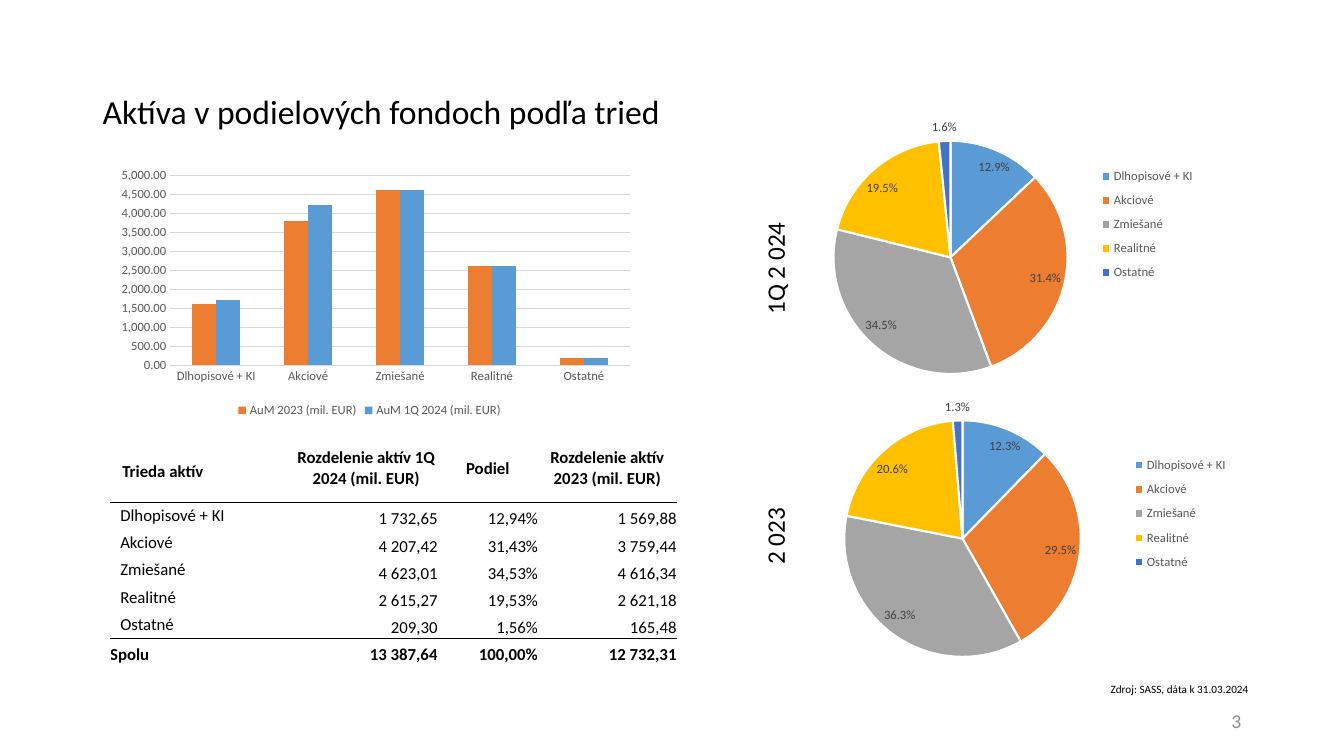
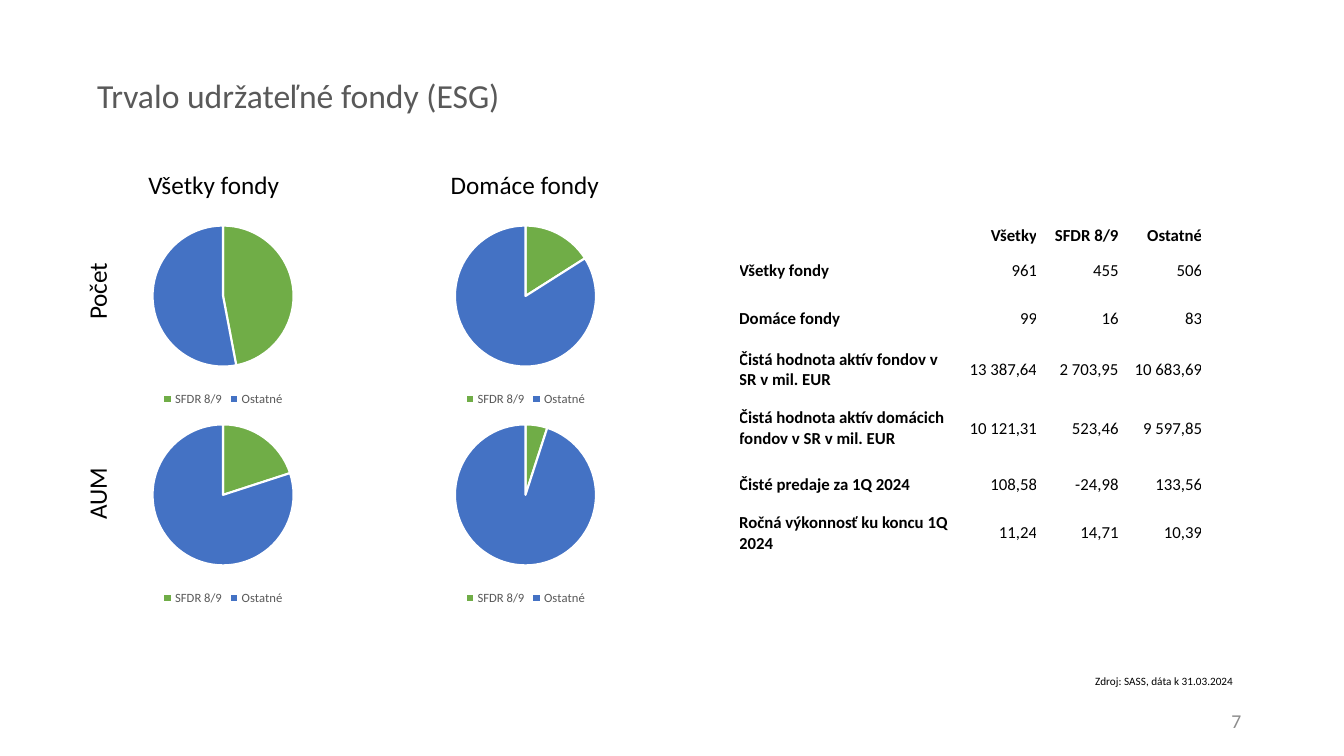
from collections import namedtuple

from lxml.etree import SubElement
from pptx import Presentation
from pptx.chart.data import CategoryChartData
from pptx.dml.color import RGBColor
from pptx.enum.chart import XL_CHART_TYPE as Chart
from pptx.enum.chart import XL_LABEL_POSITION as LabelPos
from pptx.enum.chart import XL_LEGEND_POSITION as LegendPos
from pptx.enum.chart import XL_TICK_MARK as Tick
from pptx.enum.text import MSO_ANCHOR as Anchor
from pptx.enum.text import PP_ALIGN as Align
from pptx.oxml.ns import qn
from pptx.util import Inches, Pt

Box = namedtuple("Box", "x y w h")
W, H = Inches(13.33), Inches(7.5)
FONT = "Calibri"
COLORS = {
    "black": "000000", "gray": "595959", "label": "404040", "number": "8C8C8C",
    "grid": "D9D9D9", "white": "FFFFFF", "blue": "5B9BD5", "orange": "ED7D31",
    "silver": "A5A5A5", "gold": "FFC000", "navy": "4472C4", "green": "70AD47",
}
CLASS_COLORS = ["blue", "orange", "silver", "gold", "navy"]
ESG_COLORS = ["green", "navy"]
SOURCE = "Zdroj: SASS, dáta k 31.03.2024"

ASSET_ROWS = [
    ["Trieda aktív", "Rozdelenie aktív 1Q 2024 (mil. EUR)", "Podiel",
     "Rozdelenie aktív 2023 (mil. EUR)"],
    ["Dlhopisové + KI", "1 732,65", "12,94%", "1 569,88"],
    ["Akciové", "4 207,42", "31,43%", "3 759,44"],
    ["Zmiešané", "4 623,01", "34,53%", "4 616,34"],
    ["Realitné", "2 615,27", "19,53%", "2 621,18"],
    ["Ostatné", "209,30", "1,56%", "165,48"],
    ["Spolu", "13 387,64", "100,00%", "12 732,31"],
]
ESG_ROWS = [
    ["", "Všetky", "SFDR 8/9", "Ostatné"],
    ["Všetky fondy", "961", "455", "506"],
    ["Domáce fondy", "99", "16", "83"],
    ["Čistá hodnota aktív fondov v SR v mil. EUR", "13 387,64", "2 703,95", "10 683,69"],
    ["Čistá hodnota aktív domácich fondov v SR v mil. EUR", "10 121,31", "523,46", "9 597,85"],
    ["Čisté predaje za 1Q 2024", "108,58", "-24,98", "133,56"],
    ["Ročná výkonnosť ku koncu 1Q 2024", "11,24", "14,71", "10,39"],
]
CLASSES = [row[0] for row in ASSET_ROWS[1:-1]]


def rgb(name):
    """Return the named colour."""
    return RGBColor.from_string(COLORS[name])


def emu(box):
    """Turn a box in percent of the slide into lengths."""
    return (int(box.x * W / 100), int(box.y * H / 100),
            int(box.w * W / 100), int(box.h * H / 100))


def style_font(font, size, color="black", bold=False):
    """Set typeface, size, colour and weight."""
    font.name, font.size, font.bold = FONT, Pt(size), bold
    font.color.rgb = rgb(color)


def write(tf, text, size=12, color="black", bold=False, align=Align.LEFT, spacing=None):
    """Write one formatted paragraph into a text frame."""
    p = tf.paragraphs[0]
    p.alignment = align
    if spacing:
        p.line_spacing = spacing
    r = p.add_run()
    r.text = text
    style_font(r.font, size, color, bold)


def add_text(s, box, text, anchor=Anchor.TOP, rotation=0, wrap=True, **fmt):
    """Add a text box."""
    sp = s.shapes.add_textbox(*emu(box))
    sp.rotation = rotation
    sp.text_frame.word_wrap = wrap
    sp.text_frame.vertical_anchor = anchor
    write(sp.text_frame, text, **fmt)


def add_vertical(s, cx, cy, text):
    """Add a label that reads upwards around a centre."""
    w, h = 10, 5.33
    add_text(s, Box(cx - w / 2, cy - h / 2, w, h), text, rotation=270,
             size=18, align=Align.CENTER)


def add_frame(s, title, title_box, page, source_box, title_color):
    """Add title, page number and source line."""
    add_text(s, title_box, title, anchor=Anchor.MIDDLE, size=24,
             color=title_color, spacing=0.9)
    add_text(s, Box(70.6, 92.67, 22.5, 5.33), page, anchor=Anchor.MIDDLE,
             size=14, color="number", align=Align.RIGHT)
    add_text(s, source_box, SOURCE, wrap=False, size=8)


def set_layout(parent, index, shares, inner=False):
    """Fix a chart part at shares of the chart's size."""
    for old in parent.findall(qn("c:layout")):
        parent.remove(old)
    layout = SubElement(parent, qn("c:layout"))
    parent.insert(index, layout)
    manual = SubElement(layout, qn("c:manualLayout"))
    items = [("layoutTarget", "inner")] if inner else []
    items += [("xMode", "edge"), ("yMode", "edge"), *zip("xywh", shares)]
    for tag, val in items:
        SubElement(manual, qn("c:" + tag)).set("val", str(val))


def add_chart(s, box, kind, cats, series, plot=None, legend=None):
    """Add a chart with a legend and return it."""
    data = CategoryChartData()
    data.categories = cats
    for name, vals in series:
        data.add_series(name, vals)
    chart = s.shapes.add_chart(kind, *emu(box), data).chart
    chart.has_title = False
    style_font(chart.font, 10)
    chart.has_legend = True
    chart.legend.position = LegendPos.RIGHT if legend else LegendPos.BOTTOM
    chart.legend.include_in_layout = False
    style_font(chart.legend.font, 9, "gray")
    if plot:
        set_layout(chart._chartSpace.chart.plotArea, 0, plot, inner=True)
    if legend:
        set_layout(chart.legend._element, 1, legend)
    return chart


def add_pie(s, box, cats, vals, colors, labels=False, **layout):
    """Add a pie with white gaps between its slices."""
    chart = add_chart(s, box, Chart.PIE, cats, [("Series 1", vals)], **layout)
    plot = chart.plots[0]
    plot.vary_by_categories = True
    for i, color in enumerate(colors):
        fmt = plot.series[0].points[i].format
        fmt.fill.solid()
        fmt.fill.fore_color.rgb = rgb(color)
        fmt.line.color.rgb = rgb("white")
        fmt.line.width = Pt(1.5)
    if labels:
        plot.has_data_labels = True
        dl = plot.data_labels
        dl.show_percentage, dl.show_value = True, False
        dl.number_format, dl.number_format_is_linked = "0.0%", False
        dl.position = LabelPos.BEST_FIT
        style_font(dl.font, 9, "label")


def add_columns(s, box):
    """Add the column chart of assets in both periods."""
    series = [("AuM 2023 (mil. EUR)", [1600, 3800, 4600, 2600, 200]),
              ("AuM 1Q 2024 (mil. EUR)", [1700, 4200, 4600, 2600, 200])]
    chart = add_chart(s, box, Chart.COLUMN_CLUSTERED, CLASSES, series,
                      plot=(0.14, 0.04, 0.83, 0.74))
    plot = chart.plots[0]
    plot.vary_by_categories = False
    plot.gap_width, plot.overlap = 182, 0
    for ser, color in zip(plot.series, ["orange", "blue"]):
        ser.format.fill.solid()
        ser.format.fill.fore_color.rgb = rgb(color)
    cat, val = chart.category_axis, chart.value_axis
    for axis in (cat, val):
        axis.major_tick_mark = axis.minor_tick_mark = Tick.NONE
        style_font(axis.tick_labels.font, 9, "gray")
    val.minimum_scale, val.maximum_scale, val.major_unit = 0, 5000, 500
    val.tick_labels.number_format = "#,##0.00"
    val.tick_labels.number_format_is_linked = False
    val.format.line.fill.background()
    for line in (cat.format.line, val.major_gridlines.format.line):
        line.color.rgb = rgb("grid")
        line.width = Pt(0.75)


def add_border(cell, side):
    """Draw a thin black line on one side of a cell."""
    tc_pr = cell._tc.get_or_add_tcPr()
    ln = SubElement(tc_pr, qn("a:" + side), w=str(Pt(1)))
    tc_pr.insert(0, ln)
    fill = SubElement(ln, qn("a:solidFill"))
    SubElement(fill, qn("a:srgbClr"), val=COLORS["black"])


def add_table(s, box, rows, widths, heights, cell_style, borders=None):
    """Add a plain table whose cells are styled by row and column."""
    x, y, w, h = emu(box)
    table = s.shapes.add_table(len(rows), len(widths), x, y, w, h).table
    table.first_row = table.horz_banding = False
    for col, share in zip(table.columns, widths):
        col.width = int(w * share / sum(widths))
    for row, share in zip(table.rows, heights):
        row.height = int(h * share / sum(heights))
    for i, row in enumerate(rows):
        for j, text in enumerate(row):
            cell = table.cell(i, j)
            anchor, (left, bottom), fmt = cell_style(i, j)
            cell.margin_left, cell.margin_bottom = Inches(left), Inches(bottom)
            cell.margin_right = cell.margin_top = 0
            cell.vertical_anchor = anchor
            cell.fill.background()
            if text:
                write(cell.text_frame, text, **fmt)
            if borders and i in borders:
                add_border(cell, borders[i])


def asset_style(i, j):
    """Style a cell of the asset class table."""
    last = len(ASSET_ROWS) - 1
    bold = i in (0, last)
    if j == 0:
        anchor = Anchor.BOTTOM if bold else Anchor.MIDDLE
        insets = {0: (0.12, 0.2), last: (0, 0)}.get(i, (0.1, 0))
        return anchor, insets, dict(bold=bold)
    if i == 0:
        return Anchor.MIDDLE, (0, 0), dict(bold=True, align=Align.CENTER)
    return Anchor.BOTTOM, (0, 0), dict(bold=bold, align=Align.RIGHT)


def esg_style(i, j):
    """Style a cell of the sustainable funds table."""
    return (Anchor.MIDDLE if i else Anchor.BOTTOM, (0, 0),
            dict(bold=i == 0 or j == 0, align=Align.RIGHT if j else Align.LEFT))


def add_pie_grid(s, box, columns, rows, shares):
    """Add small pies in a grid with column and row labels."""
    w, h = box.w / len(columns), box.h / len(rows)
    for j, text in enumerate(columns):
        add_text(s, Box(box.x + w * (j + 0.22), box.y - 6.27, w * 0.75, 5.33), text, size=18)
    for i, text in enumerate(rows):
        add_vertical(s, box.x + 1.85, box.y + h * (i * 1.02 + 0.4), text)
        for j, share in enumerate(shares[i]):
            add_pie(s, Box(box.x + w * j, box.y + h * i, w, h),
                    ["SFDR 8/9", "Ostatné"], [share, 100 - share], ESG_COLORS)


def asset_slide(s):
    """Build the slide on assets by class."""
    add_frame(s, "Aktíva v podielových fondoch podľa tried", Box(6.9, 5.33, 86.27, 19.33),
              "3", Box(81.9, 89.6, 12.15, 3.2), "black")
    pies = [
        ("1Q 2 024", 35.5, Box(57.39, 13.2, 32.93, 36.4),
         [12.9, 31.4, 34.5, 19.5, 1.6], (0.07, 0.15, 0.67, 0.85)),
        ("2 023", 70.95, Box(56.15, 51.2, 37.28, 36.8),
         [12.3, 29.5, 36.3, 20.6, 1.3], (0.08, 0.12, 0.67, 0.85)),
    ]
    for label, cy, box, vals, plot in pies:
        add_pie(s, box, CLASSES, vals, CLASS_COLORS, labels=True,
                plot=plot, legend=(0.73, 0.22, 0.24, 0.47))
        add_vertical(s, 57.65, cy, label)
    add_columns(s, Box(6.9, 21.8, 41.2, 34))
    add_table(s, Box(8.2, 57.5, 42.15, 30.53), ASSET_ROWS, [1.84, 1.42, 1, 1.38],
              [0.67] + [0.27] * 6, asset_style, {0: "lnB", 1: "lnT", 5: "lnB", 6: "lnT"})


def esg_slide(s):
    """Build the slide on sustainable funds."""
    add_frame(s, "Trvalo udržateľné fondy (ESG)", Box(6.48, 3.25, 89.57, 19.33),
              "7", Box(80.75, 88.53, 12.38, 3.2), "gray")
    add_pie_grid(s, Box(5.35, 28, 45, 52.6), ["Všetky fondy", "Domáce fondy"],
                 ["Počet", "AUM"], [[47, 16], [20, 5]])
    add_table(s, Box(55, 26.27, 34.45, 47.47), ESG_ROWS, [2.1, 0.86, 0.81, 0.83],
              [0.47, 0.48, 0.48, 0.53, 0.63, 0.48, 0.48], esg_style)


def main():
    """Build and save the presentation."""
    prs = Presentation()
    prs.slide_width, prs.slide_height = W, H
    for build in (asset_slide, esg_slide):
        build(prs.slides.add_slide(prs.slide_layouts[6]))
    prs.save("out.pptx")


if __name__ == "__main__":
    main()
